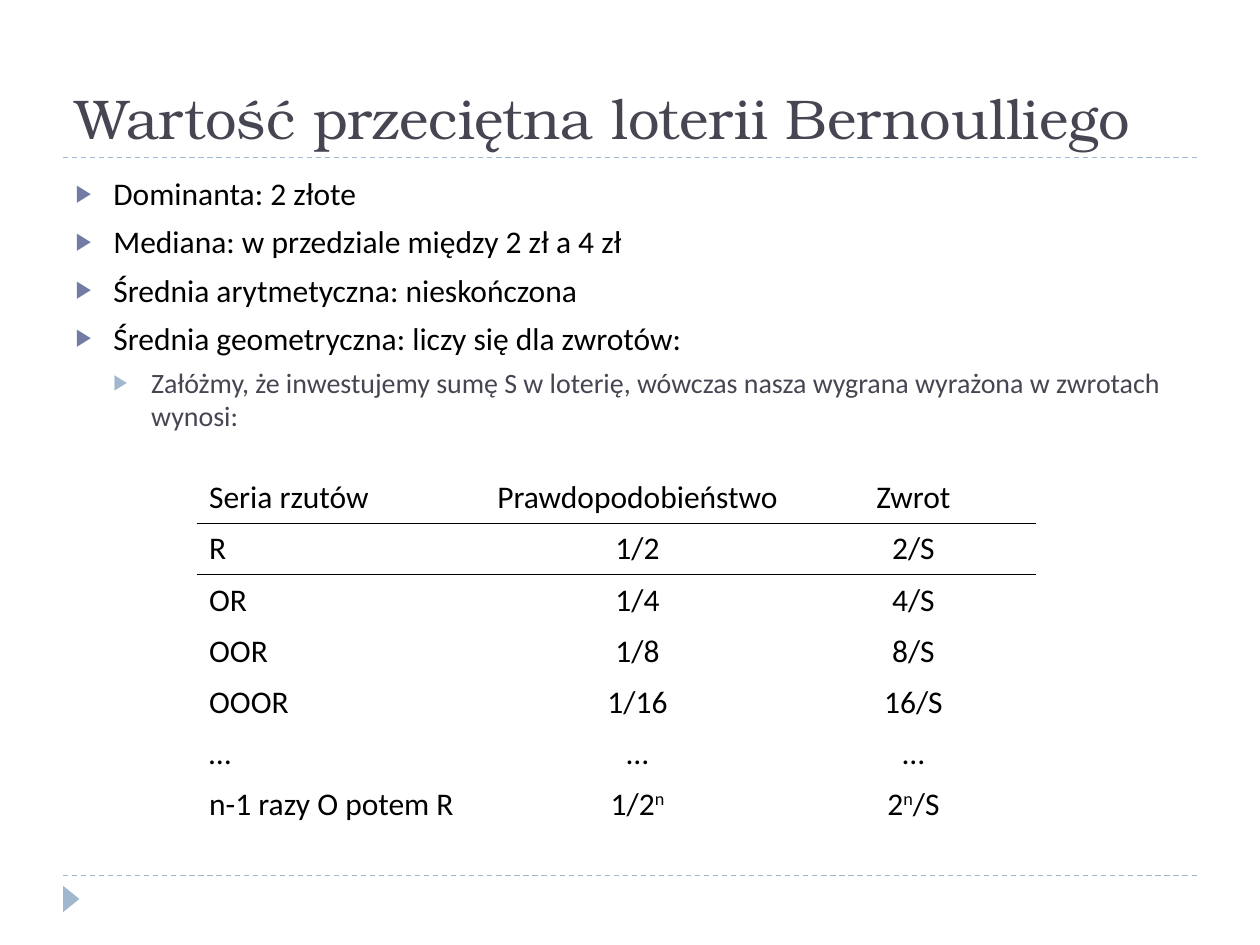
"""Build the slide on the average value of the Bernoulli lottery."""
from dataclasses import dataclass

from lxml import etree
from pptx import Presentation
from pptx.dml.color import RGBColor
from pptx.enum.dml import MSO_LINE_DASH_STYLE as Dash
from pptx.enum.shapes import MSO_CONNECTOR as Connector, MSO_SHAPE as Shape
from pptx.enum.text import MSO_ANCHOR as Anchor, MSO_AUTO_SIZE as AutoSize, PP_ALIGN as Align
from pptx.oxml import parse_xml
from pptx.oxml.ns import nsdecls, qn
from pptx.util import Inches, Pt


@dataclass(frozen=True)
class Theme:
    title_font: str = "TeX Gyre Bonum"
    body_font: str = "Calibri"
    text: str = "000000"
    heading: str = "464653"
    bullet: str = "727CA3"
    accent: str = "9FB8CD"
    title_size: int = 32
    body_size: int = 18
    detail_size: int = 16


theme = Theme()


def style_font(font, name, size, color):
    font.name = name
    font.size = Pt(size)
    font.color.rgb = RGBColor.from_string(color)


def place(shape, left, top, width, height):
    shape.left, shape.top = Inches(left), Inches(top)
    shape.width, shape.height = Inches(width), Inches(height)
    shape.text_frame.auto_size = AutoSize.NONE
    shape.text_frame.word_wrap = True


presentation = Presentation()
presentation.slide_width, presentation.slide_height = Inches(10), Inches(7.5)
slide = presentation.slides.add_slide(presentation.slide_layouts[1])

for top in (6.95, 1.25):
    rule = slide.shapes.add_connector(
        Connector.STRAIGHT, Inches(0.5), Inches(top), Inches(9.5), Inches(top))
    rule.line.color.rgb = RGBColor.from_string(theme.accent)
    rule.line.width = Pt(0.75)
    rule.line.dash_style = Dash.DASH
    etree.SubElement(rule._element.spPr, qn("a:effectLst"))

marker = slide.shapes.add_shape(
    Shape.ISOSCELES_TRIANGLE, Inches(0.46), Inches(7.07), Inches(0.21), Inches(0.13))
marker.rotation = 90
marker.shadow.inherit = False
marker.fill.solid()
marker.fill.fore_color.rgb = RGBColor.from_string(theme.accent)
marker.line.fill.background()

title = slide.shapes.title
place(title, 0.5, 0.17, 9, 1.08)
title.text_frame.vertical_anchor = Anchor.BOTTOM
title.text_frame.text = "Wartość przeciętna loterii Bernoulliego"
heading = title.text_frame.paragraphs[0]
heading.alignment = Align.LEFT
style_font(heading.runs[0].font, theme.title_font, theme.title_size, theme.heading)

points = [
    (0, "Dominanta: 2 złote"),
    (0, "Mediana: w przedziale między 2 zł a 4 zł"),
    (0, "Średnia arytmetyczna: nieskończona"),
    (0, "Średnia geometryczna: liczy się dla zwrotów:"),
    (1, "Załóżmy, że inwestujemy sumę S w loterię, "
        "wówczas nasza wygrana wyrażona w zwrotach wynosi:"),
]
levels = [
    (theme.bullet, theme.body_size, theme.text, 6),
    (theme.accent, theme.detail_size, theme.heading, 5),
]
body = slide.placeholders[1]
place(body, 0.5, 1.33, 9, 5.4)
body.text_frame.vertical_anchor = Anchor.TOP
body.text_frame.text = "\n".join(text for _, text in points)
for index, (level, _) in enumerate(points):
    bullet_color, size, color, space = levels[level]
    paragraph = body.text_frame.paragraphs[index]
    paragraph.level = level
    properties = paragraph._p.get_or_add_pPr()
    properties.set("marL", str(Inches(0.3 * (level + 1))))
    properties.set("indent", str(Inches(-0.3)))
    for bullet in (
        f'<a:buClr {nsdecls("a")}><a:srgbClr val="{bullet_color}"/></a:buClr>',
        f'<a:buSzPct {nsdecls("a")} val="76000"/>',
        f'<a:buFont {nsdecls("a")} typeface="{theme.body_font}"/>',
        f'<a:buChar {nsdecls("a")} char="▶"/>',
    ):
        properties.append(parse_xml(bullet))
    paragraph.space_before = Pt(space if index else 0)
    style_font(paragraph.runs[0].font, theme.body_font, size, color)

# ^ encloses superscripts
rows = [
    ("Seria rzutów", "Prawdopodobieństwo", "Zwrot"),
    ("R", "1/2", "2/S"),
    ("OR", "1/4", "4/S"),
    ("OOR", "1/8", "8/S"),
    ("OOOR", "1/16", "16/S"),
    ("…", "…", "…"),
    ("n-1 razy O potem R", "1/2^n", "2^n^/S"),
]
widths = (2.28, 2.44, 1.94)
ruled_rows = 2
frame = slide.shapes.add_table(
    len(rows), len(widths), Inches(1.56), Inches(3.75), Inches(sum(widths)), Inches(2.84))
table = frame.table
table.first_row = table.horz_banding = False
table._tbl.tblPr.find(qn("a:tableStyleId")).text = "{2D5ABB26-0587-4C30-8999-92F81FD0307C}"
for column, width in zip(table.columns, widths):
    column.width = Inches(width)
for row_index, values in enumerate(rows):
    for column_index, value in enumerate(values):
        cell = table.cell(row_index, column_index)
        if row_index < ruled_rows:
            cell._tc.get_or_add_tcPr().append(parse_xml(
                f'<a:lnB {nsdecls("a")} w="{Pt(1)}"><a:solidFill>'
                f'<a:srgbClr val="{theme.text}"/></a:solidFill></a:lnB>'))
        cell.fill.background()
        paragraph = cell.text_frame.paragraphs[0]
        paragraph.alignment = Align.CENTER if column_index else Align.LEFT
        for part_index, part in enumerate(value.split("^")):
            run = paragraph.add_run()
            run.text = part
            style_font(run.font, theme.body_font, theme.body_size, theme.text)
            if part_index % 2:
                run._r.get_or_add_rPr().set("baseline", "30000")

presentation.save("out.pptx")
